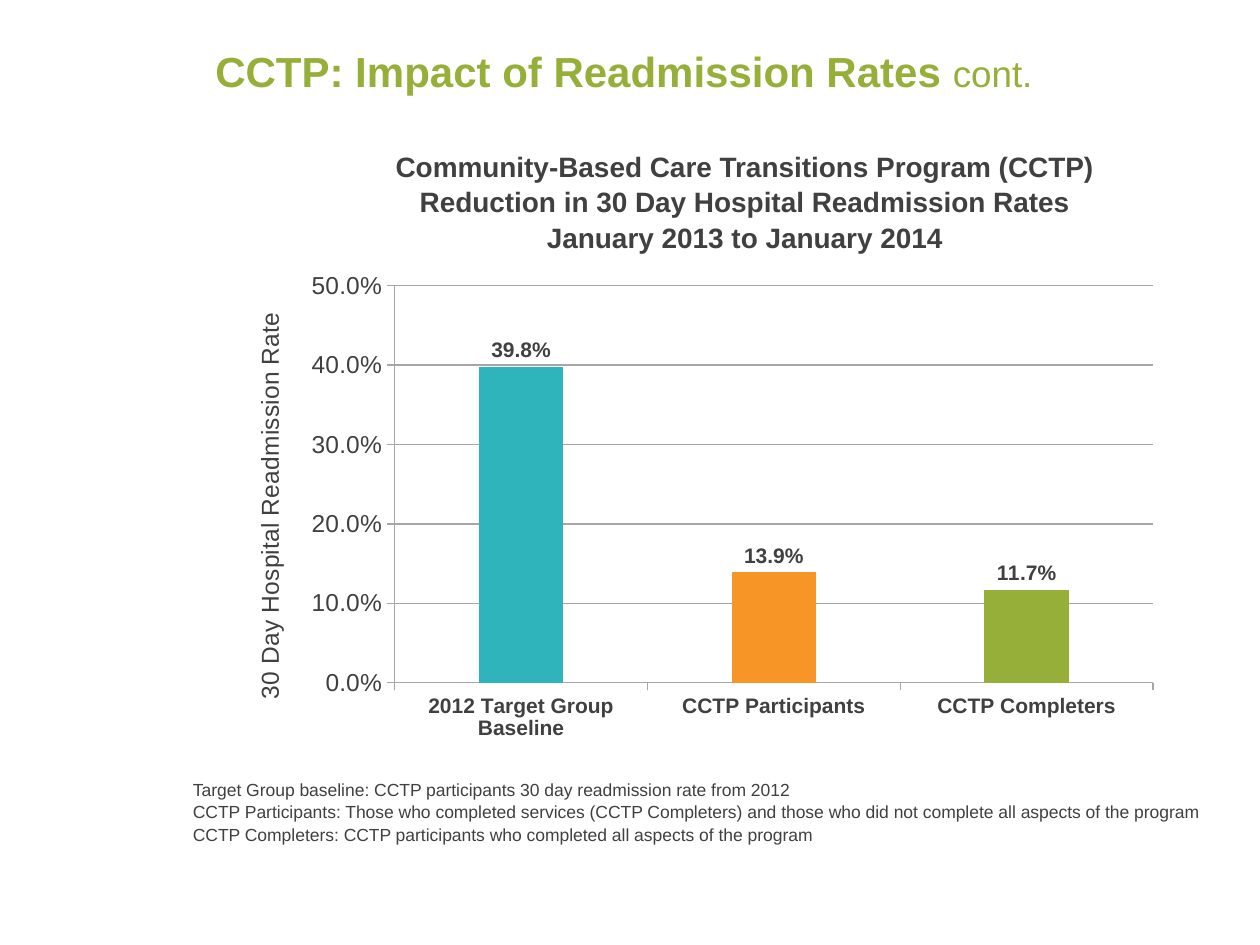
"""Build the slide on CCTP readmission rates."""
from lxml.etree import SubElement
from pptx import Presentation
from pptx.chart.data import CategoryChartData
from pptx.dml.color import RGBColor
from pptx.enum.chart import XL_CHART_TYPE, XL_LABEL_POSITION, XL_TICK_MARK
from pptx.enum.text import MSO_ANCHOR, MSO_AUTO_SIZE, PP_ALIGN
from pptx.oxml.ns import qn
from pptx.util import Cm, Pt

GREEN = RGBColor(0x95, 0xAF, 0x39)
TEAL = RGBColor(0x2F, 0xB4, 0xBC)
ORANGE = RGBColor(0xF7, 0x95, 0x27)
DARK = RGBColor(0x40, 0x40, 0x40)
GREY = RGBColor(0xA6, 0xA6, 0xA6)


def style(font, size, color=DARK, bold=False):
    font.name, font.size, font.bold = "Arial", Pt(size), bold
    font.color.rgb = color


def write(box, lines, align=PP_ALIGN.LEFT, spacing=1.0, **look):
    frame = box.text_frame
    frame.word_wrap = True
    frame.auto_size = MSO_AUTO_SIZE.NONE
    frame.vertical_anchor = MSO_ANCHOR.TOP
    frame.margin_left = frame.margin_right = 0
    frame.margin_top = frame.margin_bottom = 0
    frame.text = "\n".join(lines)
    for para in frame.paragraphs:
        para.alignment, para.line_spacing = align, spacing
        style(para.runs[0].font, **look)


deck = Presentation()
deck.slide_width, deck.slide_height = Cm(25.4), Cm(19.05)
slide = deck.slides.add_slide(deck.slide_layouts[5])

title = slide.shapes.title
title.left, title.top = Cm(4.34), Cm(0.91)
title.width, title.height = Cm(19.41), Cm(1.02)
write(title, ["CCTP: Impact of Readmission Rates "], size=24, color=GREEN, bold=True)
tail = title.text_frame.paragraphs[0].add_run()
tail.text = "cont."
style(tail.font, 21, GREEN)

data = CategoryChartData(number_format="0.0%")
data.categories = ["2012 Target Group Baseline", "CCTP Participants", "CCTP Completers"]
data.add_series("Series 1", (0.398, 0.139, 0.117))
chart = slide.shapes.add_chart(
    XL_CHART_TYPE.COLUMN_CLUSTERED, Cm(3.53), Cm(2.34), Cm(20.22), Cm(13.46), data
).chart
chart.has_title = chart.has_legend = False
style(chart.font, 18)

area = chart.plots[0]
area.gap_width = 200
area.vary_by_categories = False
bars = area.series[0]
for spot, color in enumerate((TEAL, ORANGE, GREEN)):
    fill = bars.points[spot].format.fill
    fill.solid()
    fill.fore_color.rgb = color

labels = bars.data_labels
labels.show_value = True
labels.number_format, labels.number_format_is_linked = "0.0%", False
labels.position = XL_LABEL_POSITION.OUTSIDE_END
style(labels.font, 12, bold=True)

rates, groups = chart.value_axis, chart.category_axis
for axis, size, bold in ((rates, 14, False), (groups, 12, True)):
    axis.major_tick_mark = XL_TICK_MARK.OUTSIDE
    axis.minor_tick_mark = XL_TICK_MARK.NONE
    axis.format.line.color.rgb = GREY
    axis.format.line.width = Pt(0.75)
    style(axis.tick_labels.font, size, bold=bold)
rates.minimum_scale, rates.maximum_scale, rates.major_unit = 0, 0.5, 0.1
rates.tick_labels.number_format = "0.0%"
rates.tick_labels.number_format_is_linked = False
rates.major_gridlines.format.line.color.rgb = GREY
rates.major_gridlines.format.line.width = Pt(0.75)
label = rates.axis_title.text_frame
label.text = "30 Day Hospital Readmission Rate"
style(label.paragraphs[0].runs[0].font, 14)

plot = chart._chartSpace.find(".//" + qn("c:plotArea"))
for old in plot.findall(qn("c:layout")):
    plot.remove(old)
layout = SubElement(plot, qn("c:layout"))
plot.insert(0, layout)
manual = SubElement(layout, qn("c:manualLayout"))
for key, val in (
    ("layoutTarget", "inner"), ("xMode", "edge"), ("yMode", "edge"),
    ("x", "0.219"), ("y", "0.254"), ("w", "0.756"), ("h", "0.595"),
):
    SubElement(manual, qn("c:" + key)).set("val", val)

notes = slide.shapes.add_textbox(Cm(3.89), Cm(15.67), Cm(20.37), Cm(1.27))
write(notes, [
    "Target Group baseline: CCTP participants 30 day readmission rate from 2012",
    "CCTP Participants: Those who completed services (CCTP Completers) "
    "and those who did not complete all aspects of the program",
    "CCTP Completers: CCTP participants who completed all aspects of the program",
], spacing=1.07, size=10)

head = slide.shapes.add_textbox(Cm(7.04), Cm(2.97), Cm(15.95), Cm(2.06))
write(head, [
    "Community-Based Care Transitions Program (CCTP)",
    "Reduction in 30 Day Hospital Readmission Rates",
    "January 2013 to January 2014",
], align=PP_ALIGN.CENTER, spacing=1.06, size=16, bold=True)

deck.save("out.pptx")
